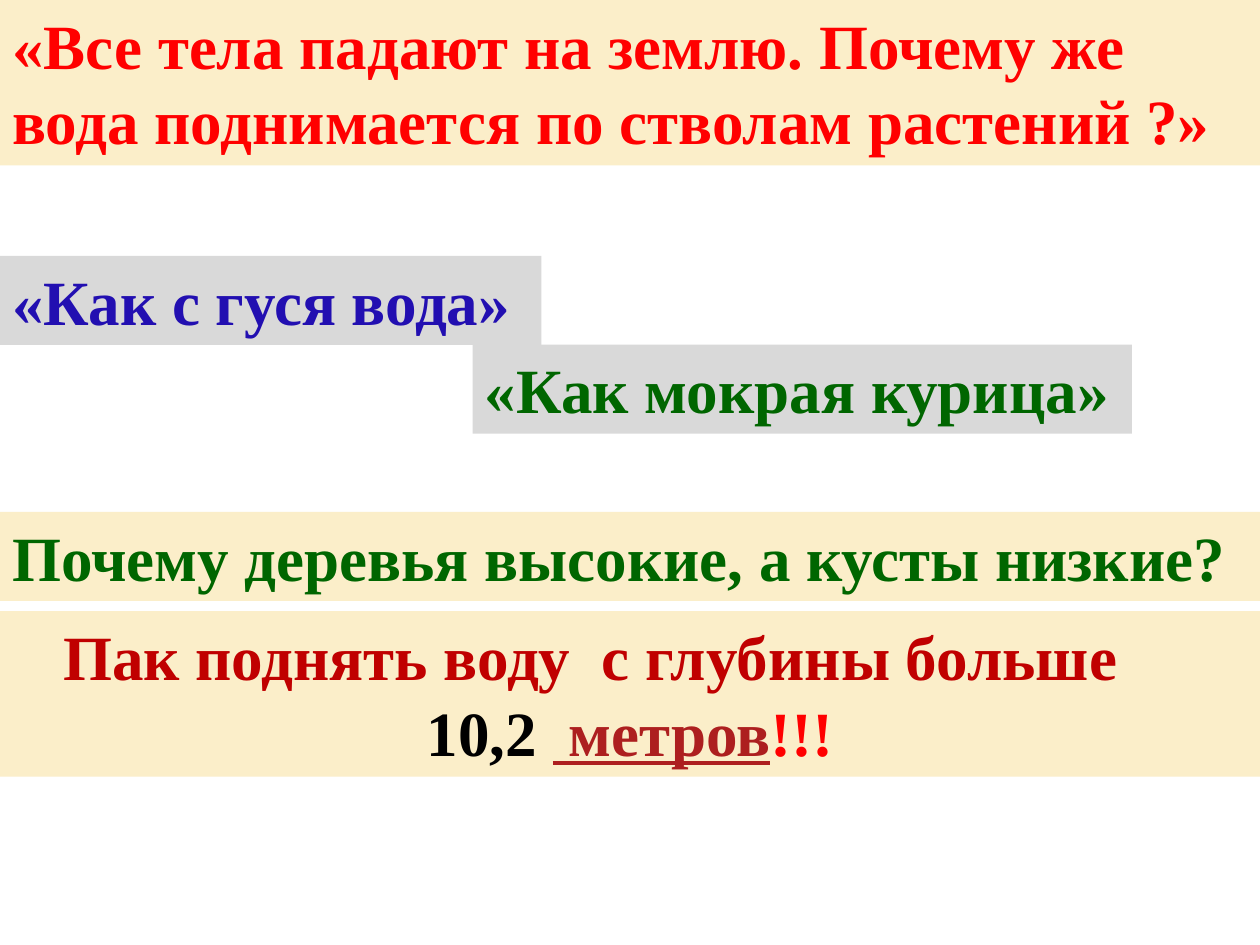
from dataclasses import dataclass

from pptx import Presentation
from pptx.dml.color import RGBColor
from pptx.enum import shapes, text
from pptx.util import Pt

CREAM = RGBColor(0xFB, 0xEE, 0xC9)
GREY = RGBColor(0xD9, 0xD9, 0xD9)
RED = RGBColor(0xFF, 0x00, 0x00)
BLUE = RGBColor(0x22, 0x0F, 0xB1)
GREEN = RGBColor(0x00, 0x66, 0x00)
DARK_RED = RGBColor(0xC0, 0x00, 0x00)
BRICK = RGBColor(0xAD, 0x1F, 0x1F)
BLACK = RGBColor(0x00, 0x00, 0x00)

SLIDE_WIDTH, SLIDE_HEIGHT = 720, 540
ONE_LINE, TWO_LINES = 50.9, 94.5


@dataclass
class Run:
    text: str
    color: RGBColor
    underline: bool = False


@dataclass
class Line:
    runs: list[Run]
    centered: bool = False
    indent: float = 0


@dataclass
class Banner:
    left: float
    top: float
    width: float
    height: float
    fill: RGBColor
    lines: list[Line]


BANNERS = [
    Banner(0, 0, SLIDE_WIDTH, TWO_LINES, CREAM, [Line([Run(
        "«Все тела падают на землю. Почему же вода поднимается по стволам растений ?»", RED)])]),
    Banner(0, 146.2, 309.4, ONE_LINE, GREY, [Line([Run("«Как с гуся вода»", BLUE)])]),
    Banner(270, 196.9, 376.8, ONE_LINE, GREY, [Line([Run("«Как мокрая курица»", GREEN)])]),
    Banner(0, 292.5, SLIDE_WIDTH, ONE_LINE, CREAM, [Line([Run(
        "Почему деревья высокие, а кусты низкие?", GREEN)])]),
    Banner(0, 349.3, SLIDE_WIDTH, TWO_LINES, CREAM, [
        Line([Run("Пак поднять воду  с глубины больше", DARK_RED)], indent=29),
        Line([Run("10,2 ", BLACK), Run(" метров", BRICK, underline=True), Run("!!!", RED)],
             centered=True),
    ]),
]


def add_run(paragraph, content: str, *, color: RGBColor, underline: bool) -> None:
    run = paragraph.add_run()
    run.text = content
    run.font.name = "Times New Roman"
    run.font.size = Pt(36)
    run.font.bold = True
    run.font.underline = underline
    run.font.color.rgb = color


def add_banner(slide, banner: Banner) -> None:
    shape = slide.shapes.add_shape(
        shapes.MSO_SHAPE.RECTANGLE,
        Pt(banner.left), Pt(banner.top), Pt(banner.width), Pt(banner.height))
    shape.shadow.inherit = False
    shape.fill.solid()
    shape.fill.fore_color.rgb = banner.fill
    shape.line.fill.background()

    frame = shape.text_frame
    frame.word_wrap = True
    frame.auto_size = text.MSO_AUTO_SIZE.SHAPE_TO_FIT_TEXT
    frame.vertical_anchor = text.MSO_ANCHOR.TOP
    for index, line in enumerate(banner.lines):
        paragraph = frame.add_paragraph() if index else frame.paragraphs[0]
        paragraph.alignment = text.PP_ALIGN.CENTER if line.centered else text.PP_ALIGN.LEFT
        if line.indent:
            paragraph._p.get_or_add_pPr().set("marL", str(Pt(line.indent)))
        for run in line.runs:
            add_run(paragraph, run.text, color=run.color, underline=run.underline)


def main() -> None:
    presentation = Presentation()
    presentation.slide_width = Pt(SLIDE_WIDTH)
    presentation.slide_height = Pt(SLIDE_HEIGHT)
    slide = presentation.slides.add_slide(presentation.slide_layouts.get_by_name("Blank"))
    for banner in BANNERS:
        add_banner(slide, banner)
    presentation.save("out.pptx")


if __name__ == "__main__":
    main()
